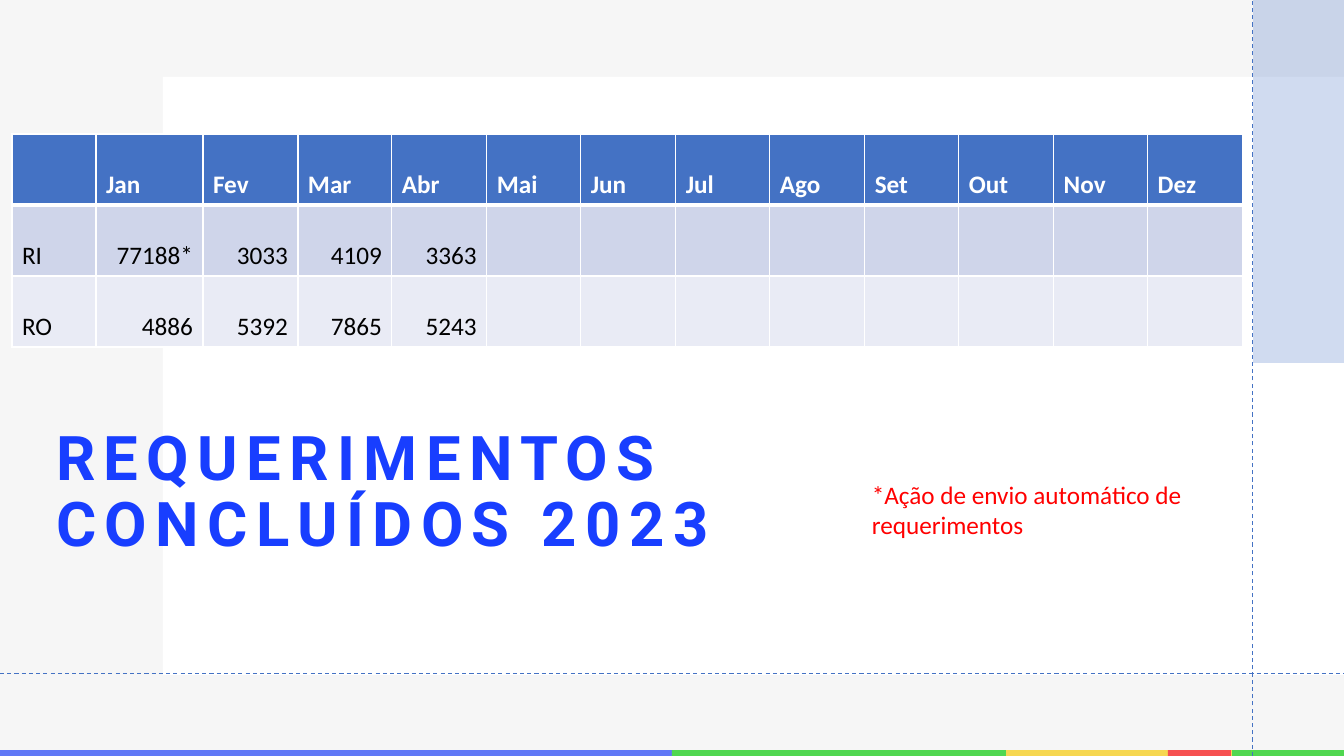
from dataclasses import dataclass
from typing import Any

from lxml.etree import SubElement
from pptx import Presentation
from pptx.dml.color import RGBColor
from pptx.enum.dml import MSO_LINE
from pptx.enum.shapes import MSO_CONNECTOR, MSO_SHAPE
from pptx.enum.text import MSO_ANCHOR as Anchor
from pptx.enum.text import MSO_AUTO_SIZE as Fit
from pptx.enum.text import PP_ALIGN as Align
from pptx.oxml.ns import qn
from pptx.util import Pt

SCALE = 914400 / 100.8
WIDE, HIGH = 1344, 756

BLACK = RGBColor(0x00, 0x00, 0x00)
WHITE = RGBColor(0xFF, 0xFF, 0xFF)
GRAY = RGBColor(0xE7, 0xE6, 0xE6)
ROYAL = RGBColor(0x18, 0x3E, 0xFF)
GREEN = RGBColor(0x00, 0xD0, 0x00)
GOLD = RGBColor(0xFF, 0xD0, 0x00)
RED = RGBColor(0xFF, 0x00, 0x00)
BLUE = RGBColor(0x44, 0x72, 0xC4)
BAND = RGBColor(0xCF, 0xD5, 0xEA)
PALE = RGBColor(0xE9, 0xEB, 0xF5)


@dataclass(frozen=True)
class Block:
    left: int
    top: int
    width: int
    height: int
    color: RGBColor
    alpha: int = 100


@dataclass(frozen=True)
class Guide:
    x1: int
    y1: int
    x2: int
    y2: int


@dataclass(frozen=True)
class Row:
    label: str
    values: tuple[str, ...]
    fill: RGBColor
    color: RGBColor = BLACK
    bold: bool = False
    align: Align = Align.RIGHT
    above: int = 1
    below: int = 1


BACK = (
    Block(0, 750, WIDE, 6, ROYAL),
    Block(672, 750, 672, 6, GREEN),
    Block(1006, 750, 226, 6, GOLD),
    Block(1168, 750, 63, 6, RED),
    Block(0, 0, WIDE, HIGH, GRAY, 35),
    Block(163, 77, 1181, 598, WHITE),
)
CORNER = Block(1253, 0, 91, 363, BLUE, 25)
GUIDES = (Guide(1253, HIGH, 1253, 0), Guide(0, 674, WIDE, 674))

MONTHS = ("Jan", "Fev", "Mar", "Abr", "Mai", "Jun",
          "Jul", "Ago", "Set", "Out", "Nov", "Dez")
ROWS = (
    Row("", MONTHS, BLUE, WHITE, True, Align.LEFT, below=3),
    Row("RI", ("77188*", "3033", "4109", "3363"), BAND, above=3),
    Row("RO", ("4886", "5392", "7865", "5243"), PALE),
)
# Month columns are 94.5 px wide on average
COLS = [84, 107] + [95 - i % 2 for i in range(len(MONTHS) - 1)]
ROW_HIGH = 71


def emu(px: int) -> int:
    return round(px * SCALE)


def place(*px: int) -> list[int]:
    return [emu(v) for v in px]


def write(frame: Any, text: str, *, size: int = 18, font: str = "Calibri",
          color: RGBColor = BLACK, bold: bool = False,
          align: Align = Align.LEFT, space: float | None = None,
          track: int = 0) -> None:
    """Fill a text frame; track is letter spacing in points."""
    para = frame.paragraphs[0]
    para.alignment = align
    para.line_spacing = space
    run = para.add_run()
    run.text = text
    run.font.size = Pt(size)
    run.font.name = font
    run.font.bold = bold
    run.font.color.rgb = color
    if track:
        run.font._element.set("spc", str(track * 100))


def add_block(slide: Any, block: Block) -> None:
    shape = slide.shapes.add_shape(
        MSO_SHAPE.RECTANGLE,
        *place(block.left, block.top, block.width, block.height))
    shape.shadow.inherit = False
    shape.line.fill.background()
    shape.fill.solid()
    shape.fill.fore_color.rgb = block.color
    if block.alpha < 100:
        tint = shape._element.spPr.find(".//" + qn("a:srgbClr"))
        SubElement(tint, qn("a:alpha"), val=str(block.alpha * 1000))


def add_guide(slide: Any, guide: Guide) -> None:
    line = slide.shapes.add_connector(
        MSO_CONNECTOR.STRAIGHT,
        *place(guide.x1, guide.y1, guide.x2, guide.y2))
    line.line.color.rgb = BLUE
    line.line.width = Pt(0.75)
    line.line.dash_style = MSO_LINE.DASH
    SubElement(line._element.spPr, qn("a:effectLst"))


def add_edges(cell: Any, above: int, below: int) -> None:
    """Draw white cell borders, widths in points."""
    props = cell._tc.get_or_add_tcPr()
    for side, width in zip("LRTB", (1, 1, above, below)):
        edge = SubElement(props, qn(f"a:ln{side}"), w=str(Pt(width)))
        fill = SubElement(edge, qn("a:solidFill"))
        SubElement(fill, qn("a:srgbClr"), val=str(WHITE))


def add_grid(slide: Any) -> None:
    grid = slide.shapes.add_table(
        len(ROWS), len(COLS),
        *place(12, 134, sum(COLS), ROW_HIGH * len(ROWS))).table
    for col, width in zip(grid.columns, COLS):
        col.width = emu(width)
    for line, row in zip(grid.rows, ROWS):
        line.height = emu(ROW_HIGH)
        texts = (row.label, *row.values)
        for i, cell in enumerate(line.cells):
            cell.vertical_anchor = Anchor.BOTTOM
            add_edges(cell, row.above, row.below)
            cell.fill.solid()
            cell.fill.fore_color.rgb = row.fill
            if i < len(texts) and texts[i]:
                write(cell.text_frame, texts[i], color=row.color,
                      bold=row.bold, align=row.align if i else Align.LEFT)


def add_title(slide: Any) -> None:
    title = slide.shapes.title
    title.left, title.top, title.width, title.height = place(46, 422, 730, 211)
    frame = title.text_frame
    frame.word_wrap = True
    frame.auto_size = Fit.NONE
    frame.vertical_anchor = Anchor.TOP
    write(frame, "REQUERIMENTOS CONCLUÍDOS 2023", size=44, font="Roboto",
          color=ROYAL, bold=True, space=0.9, track=6)
    slide.shapes._spTree.append(title._element)


def add_note(slide: Any) -> None:
    frame = slide.shapes.add_textbox(*place(862, 474, 369, 71)).text_frame
    frame.word_wrap = True
    frame.auto_size = Fit.SHAPE_TO_FIT_TEXT
    write(frame, "*Ação de envio automático de requerimentos", color=RED)


def main() -> None:
    deck = Presentation()
    deck.slide_width, deck.slide_height = place(WIDE, HIGH)
    slide = deck.slides.add_slide(deck.slide_layouts.get_by_name("Title Only"))
    for block in BACK:
        add_block(slide, block)
    add_title(slide)
    add_block(slide, CORNER)
    for guide in GUIDES:
        add_guide(slide, guide)
    add_grid(slide)
    add_note(slide)
    deck.save("out.pptx")


if __name__ == "__main__":
    main()
